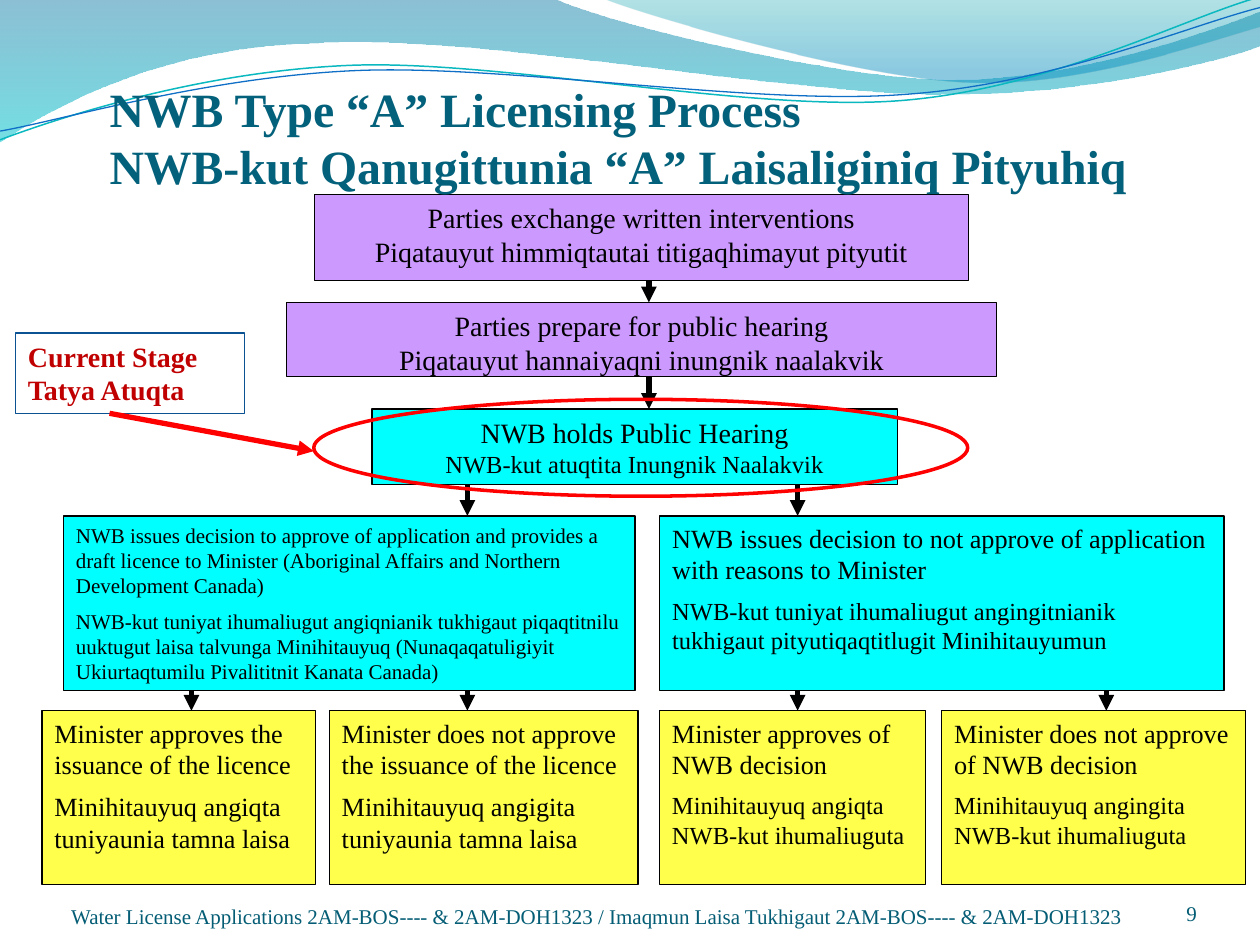
from copy import deepcopy
from dataclasses import dataclass

from lxml.etree import SubElement
from pptx import Presentation
from pptx.dml.color import RGBColor
from pptx.enum.shapes import MSO_CONNECTOR, MSO_SHAPE
from pptx.enum.text import MSO_ANCHOR, PP_ALIGN
from pptx.oxml.ns import qn
from pptx.util import Pt


@dataclass(frozen=True)
class Theme:
    font: str = "Times New Roman"
    black: str = "000000"
    purple: str = "CC99FF"
    cyan: str = "00FFFF"
    yellow: str = "FFFF00"
    red: str = "FF0000"
    dark_red: str = "C00000"
    frame_blue: str = "0B5292"
    title_teal: str = "04617B"
    footer_teal: str = "045D75"
    title: float = 27.3
    step: float = 16
    outcome: float = 15
    translation: float = 14
    small: float = 12


THEME = Theme()

# A path is a start point followed by lines (x, y) and cubic curves (six numbers).
UPPER_WAVE = [
    (0, 0), (316.8, -0.7), (342.7, 12.2, 478, 45.4, 545.8, 45.4),
    (614.2, 45.4, 689.8, 18.7, 720, 6.5), (720.7, 25.9),
    (707.8, 31.7, 626.4, 54.7, 537.1, 54), (447.8, 54, 275, 20.2, 185, 24.5),
    (92.9, 25.9, 33.1, 59.8, -0.7, 81.4), (0, 0),
]
RIGHT_WAVE = [
    (344.9, -0.7), (366.5, 8.6, 491, 44.6, 553.7, 46.8),
    (616.3, 49.7, 691.9, 23, 720, 15.1), (720, 0), (344.9, -0.7),
]
TEAL_STRAND = [
    (0, 79.9), (34.6, 67, 113.8, 41, 199.4, 37.4),
    (284.4, 33.8, 427, 64.1, 513.4, 57.6), (599.8, 51.1, 675.4, 10.8, 718.6, -1.4),
]
BLUE_STRAND = [
    (0, 74.9), (33.8, 69.1, 118.1, 43.9, 203.8, 40.3),
    (290.2, 36.7, 429.8, 60.5, 516.2, 54), (601.9, 48.2, 677.5, 15.1, 720, 4.3),
]

HEARING_TOP, HEARING_BOTTOM = 233.7, 276.9
DECISION_TOP, DECISION_BOTTOM = 294.8, 394.6
OUTCOME_TOP, OUTCOME_HEIGHT = 406.1, 99.4

STEPS = [
    ((179.6, 111.3, 373.7, 49), THEME.purple, [
        ("Parties exchange written interventions", THEME.step),
        ("Piqatauyut himmiqtautai titigaqhimayut pityutit", THEME.step)]),
    ((163.9, 172.8, 405.4, 42.5), THEME.purple, [
        ("Parties prepare for public hearing", THEME.step),
        ("Piqatauyut hannaiyaqni inungnik naalakvik", THEME.step)]),
    ((212.6, HEARING_TOP, 300.2, HEARING_BOTTOM - HEARING_TOP), THEME.cyan, [
        ("NWB holds Public Hearing", THEME.step),
        ("NWB-kut atuqtita Inungnik Naalakvik", THEME.translation)]),
]
DECISIONS = [
    (36.3, 326.6, [
        ("NWB issues decision to approve of application and provides a draft licence to "
         "Minister (Aboriginal Affairs and Northern Development Canada)", THEME.small),
        ("NWB-kut tuniyat ihumaliugut angiqnianik tukhigaut piqaqtitnilu uuktugut laisa "
         "talvunga Minihitauyuq (Nunaqaqatuligiyit Ukiurtaqtumilu Pivalititnit Kanata "
         "Canada)", THEME.small)]),
    (377, 322.5, [
        ("NWB issues decision to not approve of application with reasons to Minister",
         THEME.outcome),
        ("NWB-kut tuniyat ihumaliugut angingitnianik tukhigaut pityutiqaqtitlugit "
         "Minihitauyumun", THEME.translation)]),
]
OUTCOMES = [
    (24, 156.2, [
        ("Minister approves the issuance of the licence", THEME.outcome),
        ("Minihitauyuq angiqta tuniyaunia tamna laisa", THEME.outcome)]),
    (188.2, 176.4, [
        ("Minister does not approve the issuance of the licence", THEME.outcome),
        ("Minihitauyuq angigita tuniyaunia tamna laisa", THEME.outcome)]),
    (376.9, 151.9, [
        ("Minister approves of NWB decision", THEME.outcome),
        ("Minihitauyuq angiqta NWB-kut ihumaliuguta", THEME.translation)]),
    (538.1, 173.5, [
        ("Minister does not approve of NWB decision", THEME.outcome),
        ("Minihitauyuq angingita NWB-kut ihumaliuguta", THEME.translation)]),
]


def rgb(color):
    return RGBColor.from_string(color)


def set_alpha(color_element, percent):
    SubElement(color_element, qn("a:alpha")).set("val", str(percent * 1000))


def add_styled_run(paragraph, wording, size, color, bold):
    run = paragraph.add_run()
    run.text = wording
    run.font.name = THEME.font
    run.font.size = Pt(size)
    run.font.bold = bold
    run.font.color.rgb = rgb(color)
    return run


def write_text(frame, lines, color=THEME.black, bold=False, align=PP_ALIGN.LEFT,
               anchor=MSO_ANCHOR.TOP, space_after=0, insets=None):
    """Write a paragraph for each (text, size) pair; a newline is a line break."""
    frame.word_wrap = True
    frame.vertical_anchor = anchor
    if insets is not None:
        (frame.margin_left, frame.margin_top,
         frame.margin_right, frame.margin_bottom) = map(Pt, insets)
    for index, (wording, size) in enumerate(lines):
        paragraph = frame.add_paragraph() if index else frame.paragraphs[0]
        paragraph.alignment = align
        paragraph.space_after = Pt(space_after)
        first, *others = wording.split("\n")
        run = add_styled_run(paragraph, first, size, color, bold)
        for part in others:
            paragraph.add_line_break()
            line_break = paragraph._p.findall(qn("a:br"))[-1]
            line_break.append(deepcopy(run._r.rPr))
            add_styled_run(paragraph, part, size, color, bold)


def add_outlined(slide, kind, bounds, fill=None, line=THEME.black, width=0.75, opacity=None):
    outlined = slide.shapes.add_shape(kind, *map(Pt, bounds))
    outlined.shadow.inherit = False
    outlined.line.color.rgb = rgb(line)
    outlined.line.width = Pt(width)
    if fill is None:
        outlined.fill.background()
    else:
        outlined.fill.solid()
        outlined.fill.fore_color.rgb = rgb(fill)
    if opacity is not None:
        set_alpha(outlined._element.spPr.find(".//" + qn("a:srgbClr")), opacity)
    return outlined


def add_box(slide, bounds, fill, lines, opacity=None, **text_format):
    box = add_outlined(slide, MSO_SHAPE.RECTANGLE, bounds, fill, opacity=opacity)
    write_text(box.text_frame, lines, **text_format)


def add_arrow(slide, start, end, color=THEME.black):
    arrow = slide.shapes.add_connector(MSO_CONNECTOR.STRAIGHT, *map(Pt, start + end))
    arrow.line.color.rgb = rgb(color)
    arrow.line.width = Pt(3)
    SubElement(arrow.line._get_or_add_ln(), qn("a:tailEnd")).set("type", "triangle")
    SubElement(arrow._element.spPr, qn("a:effectLst"))


def add_path(slide, segments, closed):
    """Add a freeform, joining the three points of each curve into a cubic Bézier."""
    points = [(Pt(segment[i]), Pt(segment[i + 1]))
              for segment in segments for i in range(0, len(segment), 2)]
    builder = slide.shapes.build_freeform(*points[0], scale=1.0)
    builder.add_line_segments(points[1:], close=closed)
    outline = builder.convert_to_shape()
    outline.shadow.inherit = False
    steps = iter(list(outline._element.spPr.iter(qn("a:lnTo"))))
    for segment in segments[1:]:
        step = next(steps)
        if len(segment) == 6:
            curve = step.getparent().makeelement(qn("a:cubicBezTo"))
            step.addprevious(curve)
            for control in (step, next(steps), next(steps)):
                curve.append(control[0])
                control.getparent().remove(control)
    return outline


def add_wave(slide, segments, stops):
    """Add a filled wave shaded downwards; stops are (position, colour, opacity)."""
    wave = add_path(slide, segments, closed=True)
    wave.line.fill.background()
    wave.fill.gradient()
    wave.fill.gradient_angle = 270
    for stop, (position, color, _) in zip(wave.fill.gradient_stops, stops):
        stop.position = position
        stop.color.rgb = rgb(color)
    colors = list(wave._element.spPr.iter(qn("a:srgbClr")))
    for element, (_, _, opacity) in zip(colors, stops):
        set_alpha(element, opacity)


def add_strand(slide, segments, color, width):
    strand = add_path(slide, segments, closed=False)
    strand.fill.background()
    strand.line.color.rgb = rgb(color)
    strand.line.width = Pt(width)


def add_label(slide, bounds, wording, align):
    label = slide.shapes.add_textbox(*map(Pt, bounds))
    write_text(label.text_frame, [(wording, THEME.small)], color=THEME.footer_teal,
               align=align, anchor=MSO_ANCHOR.BOTTOM, insets=(0, 0, 0, 0))


def add_title(slide):
    title = slide.shapes.title
    title.left, title.top, title.width, title.height = map(Pt, (62.6, 20.9, 640.1, 90))
    wording = "NWB Type “A” Licensing Process\nNWB-kut Qanugittunia “A” Laisaliginiq Pityuhiq"
    write_text(title.text_frame, [(wording, THEME.title)], color=THEME.title_teal,
               bold=True, anchor=MSO_ANCHOR.BOTTOM, insets=(0, 3.6, 0, 0))
    slide.shapes._spTree.append(title._element)  # in front of the waves


def add_flow(slide):
    for bounds, fill, lines in STEPS:
        add_box(slide, bounds, fill, lines, align=PP_ALIGN.CENTER)
    for left, width, lines in DECISIONS:
        add_box(slide, (left, DECISION_TOP, width, DECISION_BOTTOM - DECISION_TOP),
                THEME.cyan, lines, space_after=6)
    for left, width, lines in OUTCOMES:
        add_box(slide, (left, OUTCOME_TOP, width, OUTCOME_HEIGHT),
                THEME.yellow, lines, opacity=70, space_after=6)
    for (upper, _, _), (lower, _, _) in zip(STEPS, STEPS[1:]):
        add_arrow(slide, (370.8, upper[1] + upper[3]), (370.8, lower[1]))
    for x in (267.1, 455.8):
        add_arrow(slide, (x, HEARING_BOTTOM), (x, DECISION_TOP))
    for x in (109.4, 267.1, 455.8, 632.2):
        add_arrow(slide, (x, DECISION_BOTTOM), (x, OUTCOME_TOP))


def add_current_stage(slide):
    add_outlined(slide, MSO_SHAPE.OVAL, (179.3, 228.2, 373.7, 55.4), line=THEME.red, width=2)
    stage = add_outlined(slide, MSO_SHAPE.RECTANGLE, (8.9, 190.3, 131, 46.1),
                         line=THEME.frame_blue)
    write_text(stage.text_frame,
               [("Current Stage", THEME.step), ("Tatya Atuqta", THEME.step)],
               color=THEME.dark_red, bold=True)
    add_arrow(slide, (62.6, 236.2), (179.3, 257.8), THEME.red)


def main():
    deck = Presentation()
    deck.slide_width, deck.slide_height = Pt(720), Pt(540)
    slide = deck.slides.add_slide(deck.slide_layouts[5])
    add_wave(slide, UPPER_WAVE, [(0, "0074A1", 45), (1, "00C6CF", 55)])
    add_wave(slide, RIGHT_WAVE, [(0, "00A1A9", 30), (0.8, "008BBF", 45)])
    add_strand(slide, TEAL_STRAND, "0AB8BF", 0.85)
    add_strand(slide, BLUE_STRAND, "0F6FC6", 0.75)
    add_flow(slide)
    add_title(slide)
    add_label(slide, (624.2, 500.4, 59.8, 28.8), "9", PP_ALIGN.RIGHT)
    add_current_stage(slide)
    add_label(slide, (31.7, 491, 619, 39.6),
              "Water License Applications 2AM-BOS---- & 2AM-DOH1323 / "
              "Imaqmun Laisa Tukhigaut 2AM-BOS---- & 2AM-DOH1323", PP_ALIGN.CENTER)
    deck.save("out.pptx")


if __name__ == "__main__":
    main()
